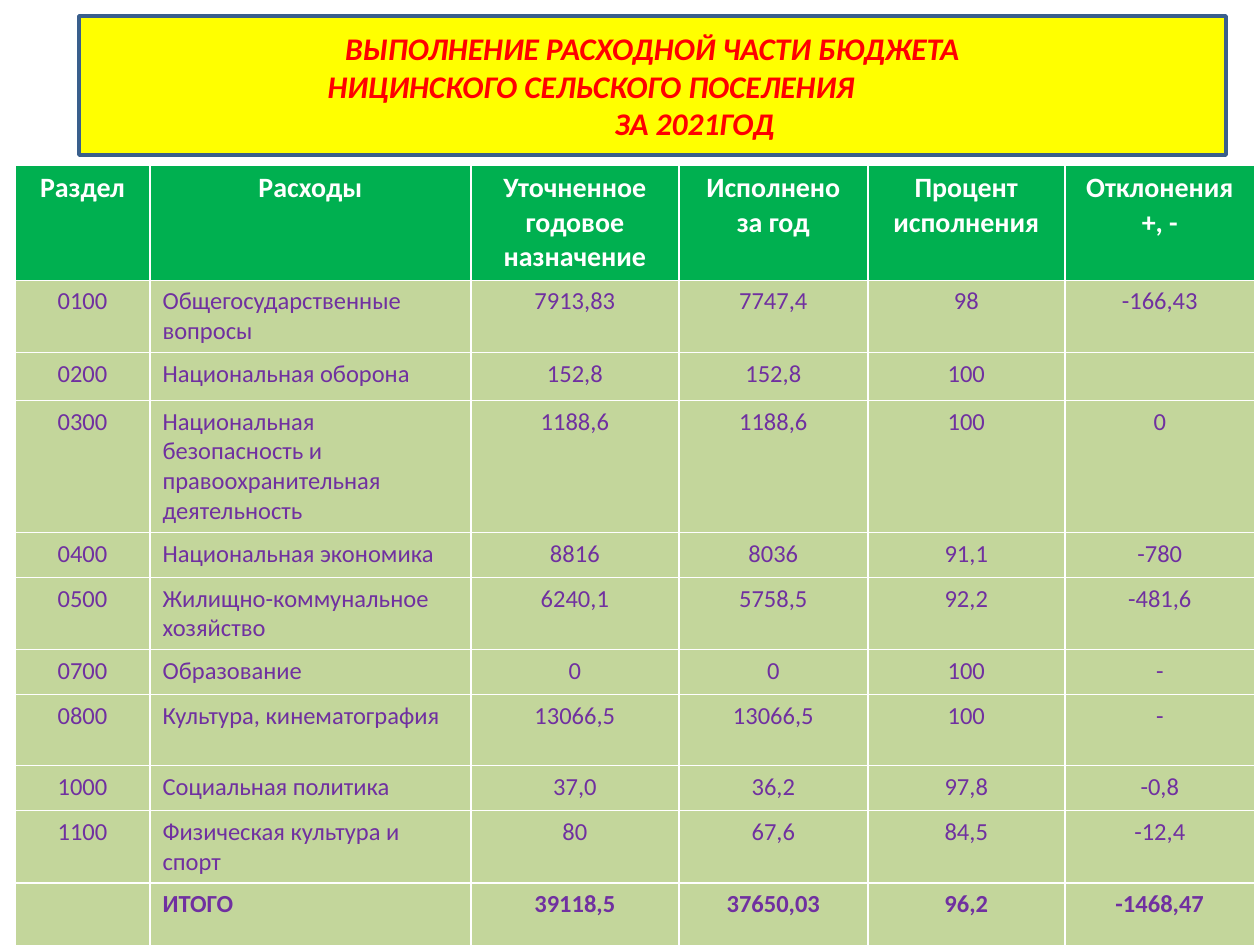
"""Build the slide with the budget expenditure table."""
from pptx import Presentation
from pptx.dml.color import RGBColor
from pptx.enum.text import MSO_ANCHOR, MSO_AUTO_SIZE, PP_ALIGN
from pptx.util import Emu, Pt

CENTER, LEFT = PP_ALIGN.CENTER, PP_ALIGN.LEFT
MIDDLE = MSO_ANCHOR.MIDDLE
NO_AUTOFIT = MSO_AUTO_SIZE.NONE
TITLE_ONLY = 5
SCALE = 914400 // 126

TITLE_LINES = [
    ("ВЫПОЛНЕНИЕ РАСХОДНОЙ ЧАСТИ БЮДЖЕТА", CENTER, 0),
    ("НИЦИНСКОГО СЕЛЬСКОГО ПОСЕЛЕНИЯ", LEFT, 236),
    ("ЗА 2021ГОД", CENTER, 84),
]
COLUMN_WIDTHS = [135, 321, 208, 189, 197, 190]
ROW_HEIGHTS = [111, 71, 45, 129, 45, 71, 45, 71, 45, 71, 63]
ROWS = [
    ["Раздел", "Расходы", "Уточненное годовое назначение", "Исполнено за год",
     "Процент исполнения", "Отклонения +, -"],
    ["0100", "Общегосударственные вопросы", "7913,83", "7747,4", "98", "-166,43"],
    ["0200", "Национальная оборона", "152,8", "152,8", "100", ""],
    ["0300", "Национальная безопасность и правоохранительная деятельность",
     "1188,6", "1188,6", "100", "0"],
    ["0400", "Национальная экономика", "8816", "8036", "91,1", "-780"],
    ["0500", "Жилищно-коммунальное хозяйство", "6240,1", "5758,5", "92,2", "-481,6"],
    ["0700", "Образование", "0", "0", "100", "-"],
    ["0800", "Культура, кинематография", "13066,5", "13066,5", "100", "-"],
    ["1000", "Социальная политика", "37,0", "36,2", "97,8", "-0,8"],
    ["1100", "Физическая культура и спорт", "80", "67,6", "84,5", "-12,4"],
    ["", "ИТОГО", "39118,5", "37650,03", "96,2", "-1468,47"],
]


def px(length):
    return Emu(length * SCALE)


def color(value):
    return RGBColor.from_string(value)


class BudgetSlide:
    font = "Calibri"
    title_fill, title_line, title_text = "FFFF00", "3A5F8C", "FF0000"
    header_fill, header_text = "00B050", "FFFFFF"
    body_fill, body_text = "C3D69B", "7030A0"

    def __init__(self, presentation):
        self.slide = presentation.slides.add_slide(presentation.slide_layouts[TITLE_ONLY])

    def add_run(self, paragraph, text, size, text_color, bold=False, italic=False):
        run = paragraph.add_run()
        run.text = text
        run.font.name = self.font
        run.font.size = Pt(size)
        run.font.bold = bold
        run.font.italic = italic
        run.font.color.rgb = color(text_color)

    def add_title(self, lines, left, top, width, height):
        shape = self.slide.shapes.title
        shape.left, shape.top = px(left), px(top)
        shape.width, shape.height = px(width), px(height)
        shape.fill.solid()
        shape.fill.fore_color.rgb = color(self.title_fill)
        shape.line.color.rgb = color(self.title_line)
        shape.line.width = Pt(2)
        frame = shape.text_frame
        frame.auto_size = NO_AUTOFIT
        frame.word_wrap = True
        frame.vertical_anchor = MIDDLE
        for index, (text, alignment, indent) in enumerate(lines):
            paragraph = frame.add_paragraph() if index else frame.paragraphs[0]
            paragraph.alignment = alignment
            properties = paragraph._p.get_or_add_pPr()
            properties.set("marL", str(px(indent)))
            properties.set("indent", "0")
            self.add_run(paragraph, text, 18, self.title_text, bold=True, italic=True)

    def add_table(self, rows, left, top, widths, heights):
        table = self.slide.shapes.add_table(
            len(rows), len(widths), px(left), px(top),
            px(sum(widths)), px(sum(heights))).table
        for column, width in zip(table.columns, widths):
            column.width = px(width)
        for row_index, (row, height) in enumerate(zip(rows, heights)):
            table.rows[row_index].height = px(height)
            for column_index, text in enumerate(row):
                self.fill_cell(table.cell(row_index, column_index), text,
                               header=row_index == 0,
                               total=row_index == len(rows) - 1,
                               name=column_index == 1)

    def fill_cell(self, cell, text, header, total, name):
        cell.fill.solid()
        cell.fill.fore_color.rgb = color(self.header_fill if header else self.body_fill)
        paragraph = cell.text_frame.paragraphs[0]
        paragraph.alignment = LEFT if name and not header else CENTER
        self.add_run(paragraph, text, 16 if header else 14,
                     self.header_text if header else self.body_text,
                     bold=header or total)


def main():
    presentation = Presentation()
    presentation.slide_width, presentation.slide_height = px(1260), px(945)
    budget = BudgetSlide(presentation)
    budget.add_table(ROWS, 15, 165, COLUMN_WIDTHS, ROW_HEIGHTS)
    budget.add_title(TITLE_LINES, 79, 16, 1147, 139)
    presentation.save("out.pptx")


if __name__ == "__main__":
    main()
